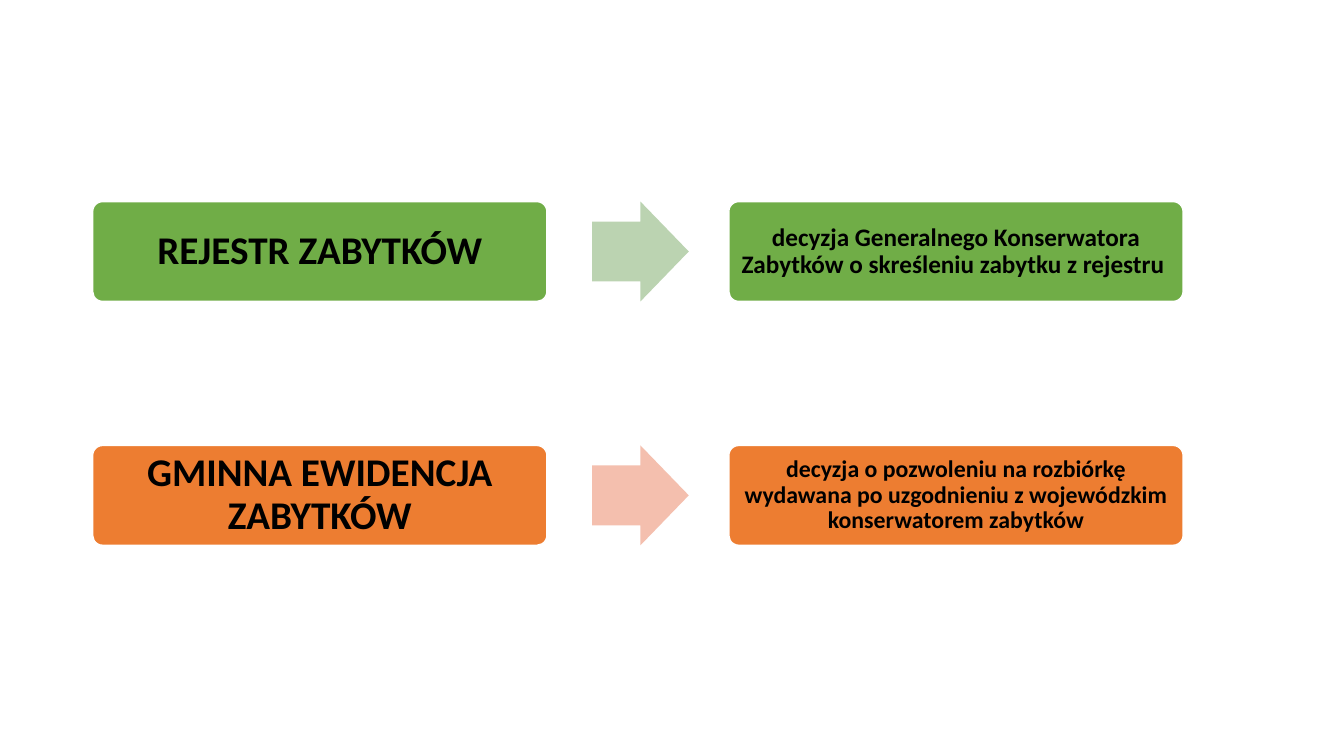
import pptx
import pptx.dml.color
import pptx.enum.shapes
import pptx.enum.text
import pptx.util

Pt = pptx.util.Pt
RGBColor = pptx.dml.color.RGBColor
SHAPES = pptx.enum.shapes.MSO_SHAPE

COLORS = {
    "green": "70AD47",
    "light green": "BBD3B1",
    "orange": "ED7D31",
    "light orange": "F4BFAE",
    "outline": "FFFFFF",
    "text": "000000",
}
BOX_WIDTH, ARROW_WIDTH, ROW_HEIGHT = 324.5, 69, 71.3
REGISTER_LEFT, ARROW_LEFT, DECISION_LEFT = 66.2, 423, 520.6

ROWS = [
    (144, "green", "REJESTR ZABYTKÓW",
     "decyzja Generalnego Konserwatora Zabytków o skreśleniu zabytku z rejestru ", 18),
    (318.2, "orange", "GMINNA EWIDENCJA ZABYTKÓW",
     "decyzja o pozwoleniu na rozbiórkę wydawana po uzgodnieniu z wojewódzkim "
     "konserwatorem zabytków", 17),
]

presentation = pptx.Presentation()
presentation.slide_width = Pt(960)
presentation.slide_height = Pt(540)
slide = presentation.slides.add_slide(presentation.slide_layouts[6])


def add_filled_shape(kind, left, top, width, color):
    shape = slide.shapes.add_shape(kind, Pt(left), Pt(top), Pt(width), Pt(ROW_HEIGHT))
    shape.shadow.inherit = False
    shape.fill.solid()
    shape.fill.fore_color.rgb = RGBColor.from_string(COLORS[color])
    shape.line.fill.background()
    return shape


def add_box(left, top, color, text, size, margin):
    box = add_filled_shape(SHAPES.ROUNDED_RECTANGLE, left, top, BOX_WIDTH, color)
    box.adjustments[0] = 0.1
    box.line.color.rgb = RGBColor.from_string(COLORS["outline"])
    box.line.width = Pt(1)
    frame = box.text_frame
    frame.word_wrap = True
    frame.vertical_anchor = pptx.enum.text.MSO_ANCHOR.MIDDLE
    frame.margin_left = frame.margin_right = Pt(margin)
    frame.margin_top = frame.margin_bottom = Pt(margin)
    frame.text = text
    paragraph = frame.paragraphs[0]
    paragraph.alignment = pptx.enum.text.PP_ALIGN.CENTER
    paragraph.line_spacing = 0.9
    font = paragraph.runs[0].font
    font.name = "Calibri"
    font.size = Pt(size)
    font.bold = True
    font.color.rgb = RGBColor.from_string(COLORS["text"])


for top, color, register, decision, decision_size in ROWS:
    add_box(REGISTER_LEFT, top, color, register, 28, 8.4)
    arrow = add_filled_shape(SHAPES.RIGHT_ARROW, ARROW_LEFT, top, ARROW_WIDTH, f"light {color}")
    arrow.adjustments[0] = 0.6
    # The head length is relative to the shorter side, here the width.
    arrow.adjustments[1] = 0.5
    add_box(DECISION_LEFT, top, color, decision, decision_size, 5)

presentation.save("out.pptx")
